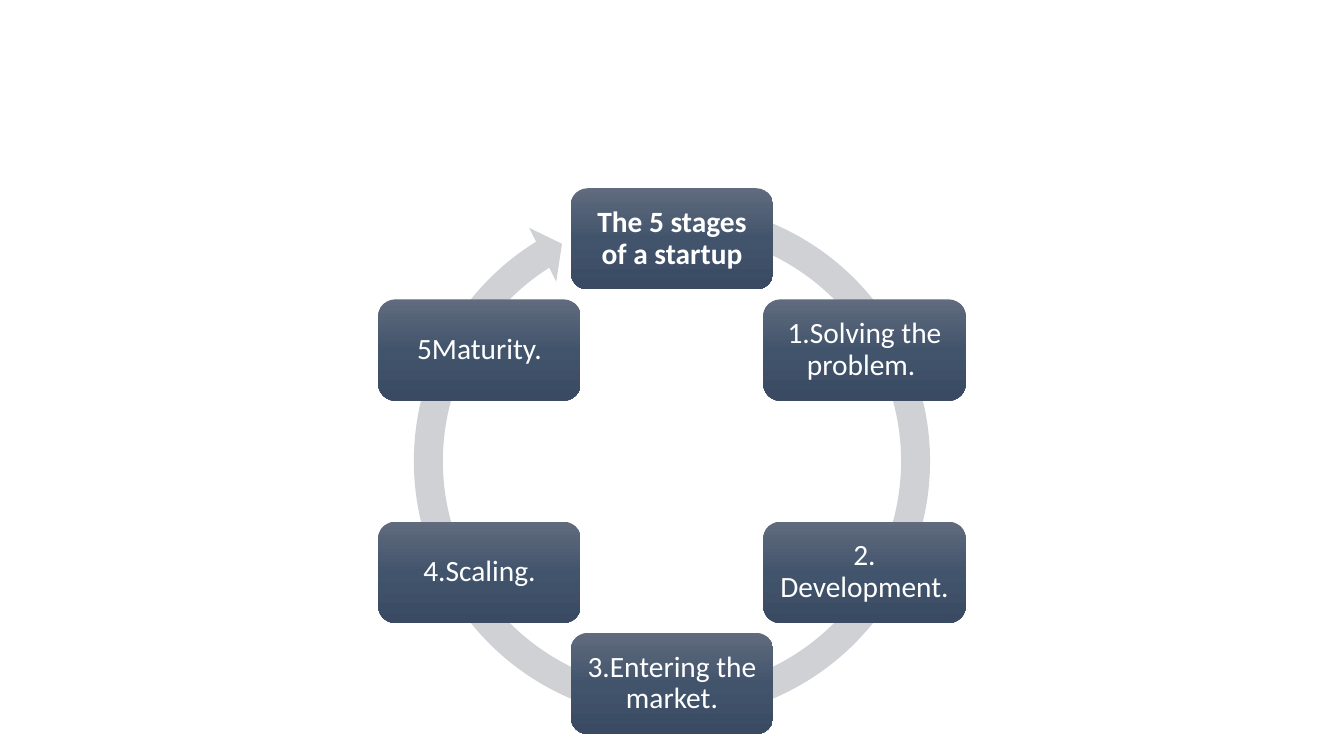
from copy import deepcopy
from dataclasses import dataclass
from math import cos, radians, sin

from pptx import Presentation
from pptx.dml.color import RGBColor
from pptx.enum.shapes import MSO_SHAPE as SHAPE
from pptx.enum.text import MSO_ANCHOR as ANCHOR, PP_ALIGN as ALIGN
from pptx.oxml.ns import qn
from pptx.shapes.autoshape import Shape
from pptx.slide import Slide
from pptx.util import Pt

WHITE = RGBColor(0xFF, 0xFF, 0xFF)
RING_GREY = RGBColor(0xCF, 0xD1, 0xD4)
BOX_GRADIENT = (
    (0, RGBColor(0x60, 0x6B, 0x7D)),
    (0.5, RGBColor(0x42, 0x54, 0x6C)),
    (1, RGBColor(0x39, 0x4A, 0x62)),
)

CENTER_X, CENTER_Y = 480, 329.4
RADIUS = 158.8
RING_SIZE = 391
RING_ADJUSTMENTS = (0.053, 3.126, 142.768, 170.986, 0.055)
BOX_W, BOX_H = 144.6, 72.3
INSET = 6.5


@dataclass(frozen=True)
class Stage:
    text: str
    bold: bool = False


STAGES = (
    Stage("The 5 stages of a startup", bold=True),
    Stage("1.Solving the problem. "),
    Stage("2. Development. "),
    Stage("3.Entering the market."),
    Stage("4.Scaling."),
    Stage("5Maturity."),
)


def add_centered(s: Slide, kind: SHAPE, x: float, y: float, w: float, h: float) -> Shape:
    """Add a plain shape whose centre is at x, y."""
    sp = s.shapes.add_shape(kind, Pt(x - w / 2), Pt(y - h / 2), Pt(w), Pt(h))
    sp.shadow.inherit = False
    sp.line.fill.background()
    return sp


def fill_gradient(sp: Shape) -> None:
    fill = sp.fill
    fill.gradient()
    fill.gradient_angle = 270
    gs_lst = sp.element.spPr.find(f".//{qn('a:gsLst')}")
    gs_lst.append(deepcopy(gs_lst[-1]))
    for stop, (position, color) in zip(fill.gradient_stops, BOX_GRADIENT):
        stop.position = position
        stop.color.rgb = color


def write(sp: Shape, text: str, *, size: float = 21, bold: bool = False,
          color: RGBColor = WHITE, font: str = "Calibri") -> None:
    tf = sp.text_frame
    tf.word_wrap = True
    tf.vertical_anchor = ANCHOR.MIDDLE
    tf.margin_left = tf.margin_right = tf.margin_top = tf.margin_bottom = Pt(INSET)
    p = tf.paragraphs[0]
    p.alignment = ALIGN.CENTER
    p.line_spacing = 0.9
    r = p.add_run()
    r.text = text
    r.font.name = font
    r.font.size = Pt(size)
    r.font.bold = bold
    r.font.color.rgb = color


def add_ring(s: Slide) -> None:
    ring = add_centered(s, SHAPE.CIRCULAR_ARROW, CENTER_X, CENTER_Y, RING_SIZE, RING_SIZE)
    ring.fill.solid()
    ring.fill.fore_color.rgb = RING_GREY
    for i, value in enumerate(RING_ADJUSTMENTS):
        ring.adjustments[i] = value


def add_stage(s: Slide, stage: Stage, angle: float) -> None:
    """Add a stage box at an angle in degrees, clockwise from the top."""
    x = CENTER_X + RADIUS * sin(radians(angle))
    y = CENTER_Y - RADIUS * cos(radians(angle))
    box = add_centered(s, SHAPE.ROUNDED_RECTANGLE, x, y, BOX_W, BOX_H)
    fill_gradient(box)
    write(box, stage.text, bold=stage.bold)


def main() -> None:
    prs = Presentation()
    prs.slide_width, prs.slide_height = Pt(960), Pt(540)
    s = prs.slides.add_slide(prs.slide_layouts[6])
    add_ring(s)
    for i, stage in enumerate(STAGES):
        add_stage(s, stage, i * 360 / len(STAGES))
    prs.save("out.pptx")


if __name__ == "__main__":
    main()
